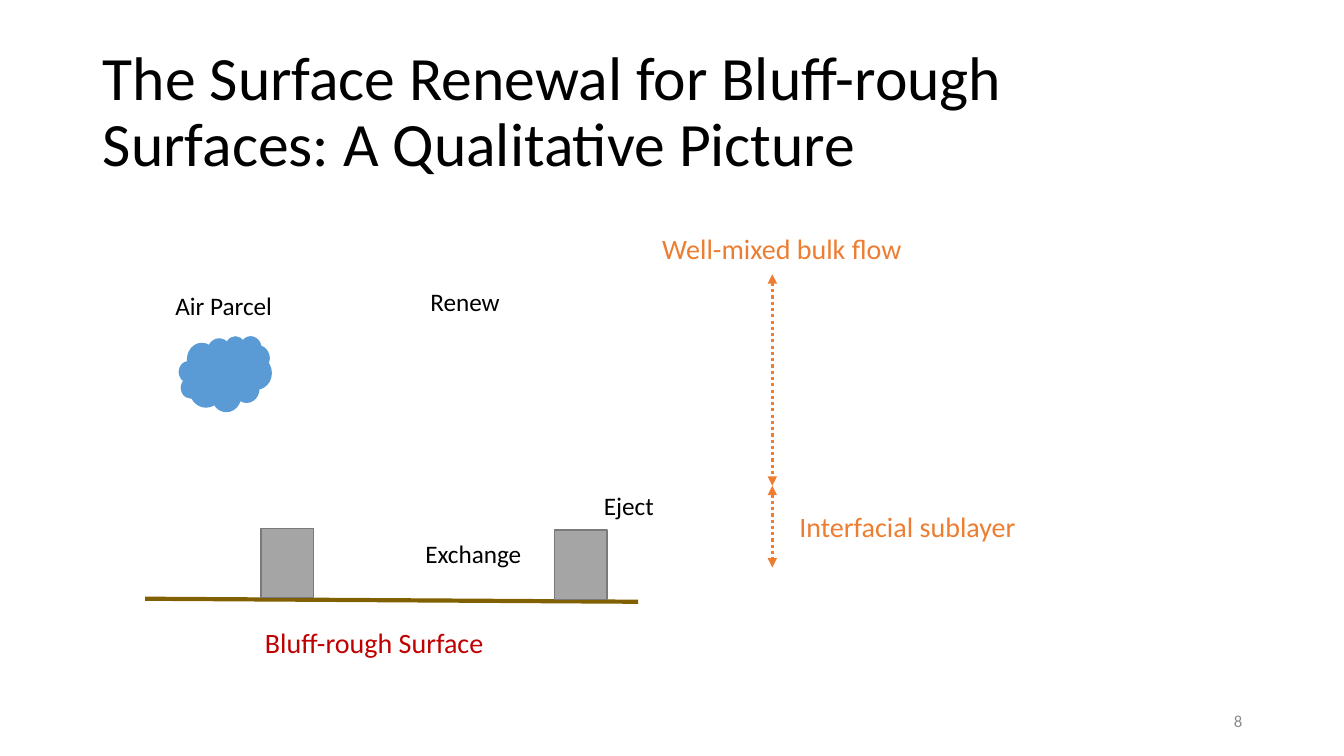
"""Build the slide on surface renewal over bluff-rough surfaces."""
import pptx
import pptx.util
import pptx.dml.color
import pptx.enum.dml
import pptx.enum.shapes
import pptx.enum.text
import pptx.oxml.ns
import pptx.oxml.xmlchemy

Inches = pptx.util.Inches
Pt = pptx.util.Pt
RGBColor = pptx.dml.color.RGBColor
OxmlElement = pptx.oxml.xmlchemy.OxmlElement
SHAPE = pptx.enum.shapes.MSO_SHAPE
ALIGN = pptx.enum.text.PP_ALIGN
ANCHOR = pptx.enum.text.MSO_ANCHOR

BLACK = RGBColor(0x00, 0x00, 0x00)
BROWN = RGBColor(0x80, 0x60, 0x00)
GREY = RGBColor(0xA5, 0xA5, 0xA5)
DARK_GREY = RGBColor(0x7A, 0x7A, 0x7A)
NUMBER_GREY = RGBColor(0x8C, 0x8C, 0x8C)
BLUE = RGBColor(0x5B, 0x9B, 0xD5)
RED = RGBColor(0xC0, 0x00, 0x00)
ORANGE = RGBColor(0xED, 0x7D, 0x31)


def write(shape, text, size, color, align=ALIGN.LEFT, anchor=ANCHOR.TOP):
    frame = shape.text_frame
    frame.text = text
    frame.word_wrap = True
    frame.auto_size = pptx.enum.text.MSO_AUTO_SIZE.NONE
    frame.vertical_anchor = anchor
    para = frame.paragraphs[0]
    para.alignment = align
    font = para.runs[0].font
    font.name = "Calibri"
    font.size = Pt(size)
    font.color.rgb = color


def draw_line(shapes, start, end, color, width):
    line = shapes.add_connector(
        pptx.enum.shapes.MSO_CONNECTOR.STRAIGHT,
        *[Inches(value) for value in start + end])
    line.line.color.rgb = color
    line.line.width = Pt(width)
    line._element.spPr.append(OxmlElement("a:effectLst"))
    return line


deck = pptx.Presentation()
deck.slide_width = Inches(13.33)
deck.slide_height = Inches(7.5)
page = deck.slides.add_slide(deck.slide_layouts[5])

title = page.shapes.title
title.left, title.top = Inches(0.92), Inches(0.4)
title.width, title.height = Inches(11.5), Inches(1.45)
write(title, "The Surface Renewal for Bluff-rough Surfaces: A Qualitative Picture",
      44, BLACK, anchor=ANCHOR.MIDDLE)
title.text_frame.paragraphs[0].line_spacing = 0.9

rough_surface = page.shapes.add_group_shape()
draw_line(rough_surface.shapes, (1.44, 5.94), (6.33, 5.97), BROWN, 3)

solids = [
    (rough_surface.shapes, SHAPE.RECTANGLE, 2.59, 5.24, 0.52, 0.69, GREY, DARK_GREY),
    (rough_surface.shapes, SHAPE.RECTANGLE, 5.5, 5.26, 0.52, 0.69, GREY, DARK_GREY),
    (page.shapes, SHAPE.CLOUD, 1.78, 3.34, 0.91, 0.74, BLUE, BLUE),
]
for shapes, kind, left, top, width, height, fill, outline in solids:
    solid = shapes.add_shape(kind, Inches(left), Inches(top), Inches(width), Inches(height))
    solid.shadow.inherit = False
    solid.fill.solid()
    solid.fill.fore_color.rgb = fill
    solid.line.color.rgb = outline
    solid.line.width = Pt(1)

layer_bounds = [2.72, 4.82, 5.63]
for top, bottom in zip(layer_bounds, layer_bounds[1:]):
    arrow = draw_line(page.shapes, (7.66, top), (7.66, bottom), ORANGE, 2.25)
    arrow.line.dash_style = pptx.enum.dml.MSO_LINE.ROUND_DOT
    stroke = arrow._element.spPr.find(pptx.oxml.ns.qn("a:ln"))
    for tag in ("a:headEnd", "a:tailEnd"):
        tip = OxmlElement(tag)
        tip.set("type", "triangle")
        stroke.append(tip)

layer_size = (2.73, 0.44, 20)
process_size = (1.6, 0.4, 18)
labels = [
    ("Bluff-rough Surface", 2.53, 6.16, layer_size, RED),
    ("Interfacial sublayer", 7.83, 5.01, layer_size, ORANGE),
    ("Well-mixed bulk flow", 6.47, 2.25, layer_size, ORANGE),
    ("Air Parcel", 1.64, 2.83, process_size, BLACK),
    ("Exchange", 4.12, 5.29, process_size, BLACK),
    ("Renew", 4.17, 2.79, process_size, BLACK),
    ("Eject", 5.89, 4.82, process_size, BLACK),
]
for text, left, top, (width, height, size), color in labels:
    label = page.shapes.add_textbox(Inches(left), Inches(top), Inches(width), Inches(height))
    write(label, text, size, color)

page_number = page.shapes.add_textbox(Inches(9.42), Inches(6.95), Inches(3), Inches(0.4))
write(page_number, "8", 12, NUMBER_GREY, ALIGN.RIGHT, ANCHOR.MIDDLE)

deck.save("out.pptx")
